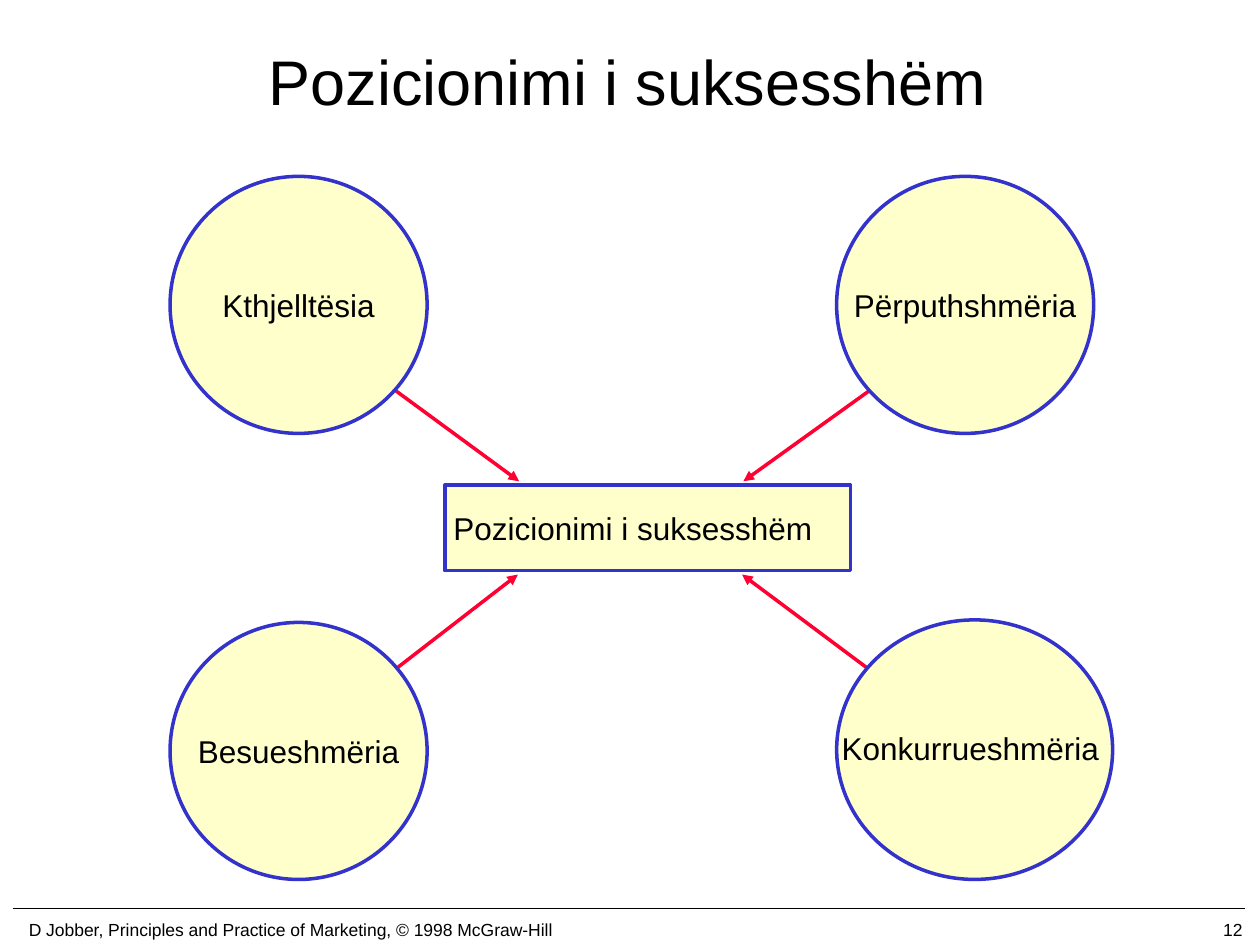
import pptx
import pptx.dml.color
import pptx.enum.shapes
import pptx.enum.text
import pptx.oxml.ns
import pptx.util
from lxml import etree
from pptx.util import Inches

BLACK = pptx.dml.color.RGBColor(0x00, 0x00, 0x00)
CREAM = pptx.dml.color.RGBColor(0xFF, 0xFF, 0xCC)
BLUE = pptx.dml.color.RGBColor(0x33, 0x33, 0xCC)
RED = pptx.dml.color.RGBColor(0xFF, 0x00, 0x33)
SHAPES = pptx.enum.shapes.MSO_SHAPE
ANCHOR = pptx.enum.text.MSO_ANCHOR
ALIGN = pptx.enum.text.PP_ALIGN


def add_text(slide, text, left, top, width, height, size=18, align=ALIGN.CENTER, anchor=ANCHOR.MIDDLE):
    """Add a one-paragraph text box."""
    box = slide.shapes.add_textbox(Inches(left), Inches(top), Inches(width), Inches(height))
    frame = box.text_frame
    frame.word_wrap = True
    frame.vertical_anchor = anchor
    paragraph = frame.paragraphs[0]
    paragraph.text = text
    paragraph.alignment = align
    paragraph.font.name = "Arial"
    paragraph.font.size = pptx.util.Pt(size)
    paragraph.font.color.rgb = BLACK


def add_outlined(slide, kind, left, top, width, height):
    """Add a cream shape with a blue outline."""
    shape = slide.shapes.add_shape(kind, Inches(left), Inches(top), Inches(width), Inches(height))
    shape.shadow.inherit = False
    shape.fill.solid()
    shape.fill.fore_color.rgb = CREAM
    shape.line.color.rgb = BLUE
    shape.line.width = pptx.util.Pt(2)


def add_line(slide, start, end, color, width, arrow=False):
    """Add a straight line, with an arrowhead at its end if asked."""
    connector = slide.shapes.add_connector(
        pptx.enum.shapes.MSO_CONNECTOR.STRAIGHT, *map(Inches, start + end))
    connector.line.color.rgb = color
    connector.line.width = pptx.util.Pt(width)
    properties = connector._element.spPr
    etree.SubElement(properties, pptx.oxml.ns.qn("a:effectLst"))
    if arrow:
        outline = properties.find(pptx.oxml.ns.qn("a:ln"))
        etree.SubElement(outline, pptx.oxml.ns.qn("a:tailEnd"), type="triangle")


def add_footer(slide):
    """Add the rule, the source line and the slide number."""
    add_line(slide, (0.1, 7.21), (9.88, 7.21), BLACK, 1)
    add_text(slide, "D Jobber, Principles and Practice of Marketing, © 1998 McGraw-Hill",
             0, 7.25, 4.61, 0.25, size=10)
    add_text(slide, "12", 7.88, 7.25, 2.08, 0.25, size=10, align=ALIGN.RIGHT)


def add_factor(slide, label, left, top, width, height, label_left, label_width):
    """Add a circle and the label across it."""
    add_outlined(slide, SHAPES.OVAL, left, top, width, height)
    add_text(slide, label, label_left, top + 0.82, label_width, 0.41, anchor=ANCHOR.TOP)


def main():
    """Build the positioning slide."""
    presentation = pptx.Presentation()
    presentation.slide_width = Inches(10)
    presentation.slide_height = Inches(7.5)
    slide = presentation.slides.add_slide(presentation.slide_layouts[6])

    add_footer(slide)
    arrows = [
        ((2.39, 2.55), (4.12, 3.82)),
        ((7.68, 2.54), (5.9, 3.82)),
        ((2.39, 5.89), (4.11, 4.56)),
        ((7.67, 5.89), (5.89, 4.56)),
    ]
    for start, end in arrows:
        add_line(slide, start, end, RED, 2, arrow=True)

    add_text(slide, "Pozicionimi i suksesshëm", 0.73, 0.01, 8.5, 1.25, size=36)
    factors = [
        ("Kthjelltësia", 1.35, 1.4, 2.04, 2.04, 1.29, 2.16),
        ("Përputhshmëria", 6.64, 1.4, 2.04, 2.04, 6.58, 2.16),
        ("Besueshmëria", 1.35, 4.94, 2.04, 2.04, 1.29, 2.16),
        ("Konkurrueshmëria", 6.64, 4.92, 2.19, 2.06, 6.49, 2.42),
    ]
    for factor in factors:
        add_factor(slide, *factor)

    add_outlined(slide, SHAPES.RECTANGLE, 3.53, 3.85, 3.22, 0.68)
    add_text(slide, "Pozicionimi i suksesshëm", 3.5, 3.99, 3.12, 0.4,
             align=ALIGN.LEFT, anchor=ANCHOR.TOP)
    presentation.save("out.pptx")


if __name__ == "__main__":
    main()
